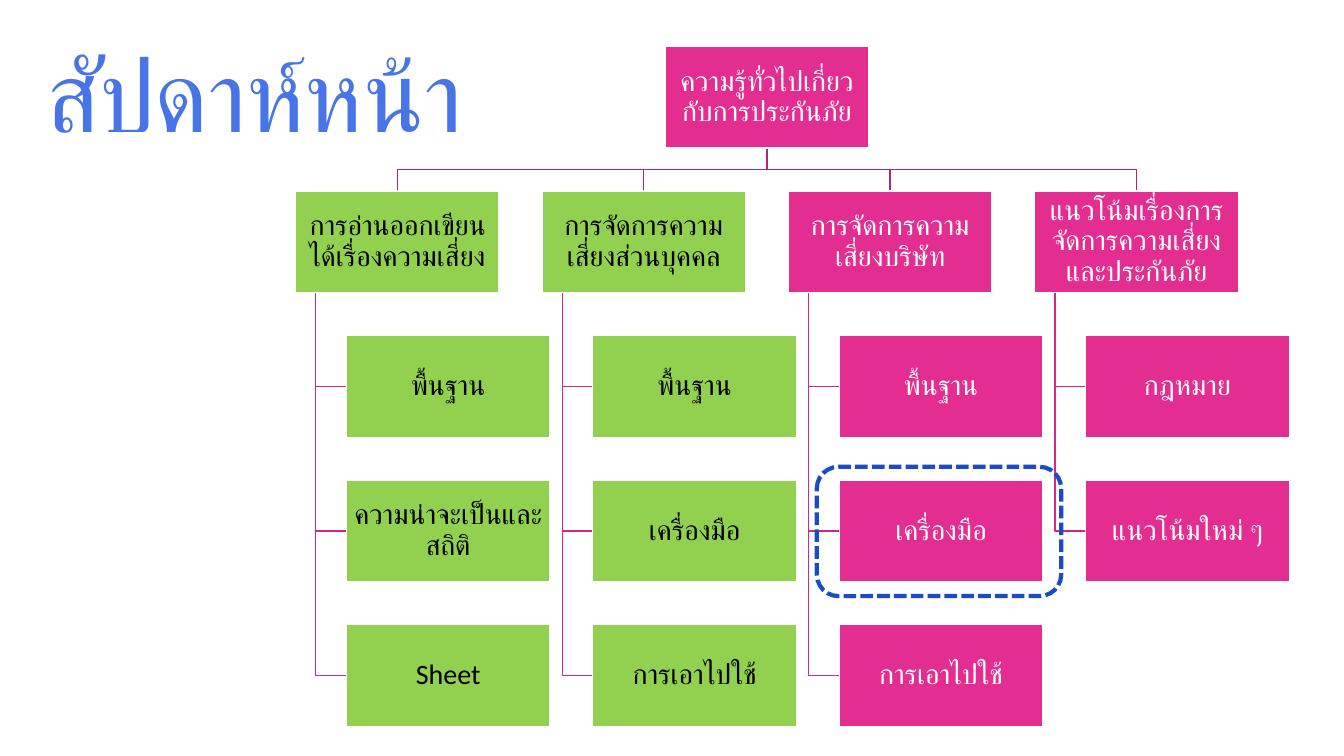
from dataclasses import dataclass

from pptx import Presentation
from pptx.dml.color import RGBColor
from pptx.enum.dml import MSO_LINE
from pptx.enum.shapes import MSO_SHAPE
from pptx.enum.text import MSO_ANCHOR, PP_ALIGN
from pptx.util import Inches, Pt

RECT = MSO_SHAPE.RECTANGLE
ROUND_RECT = MSO_SHAPE.ROUNDED_RECTANGLE
DASH = MSO_LINE.SQUARE_DOT
MIDDLE = MSO_ANCHOR.MIDDLE
BOTTOM = MSO_ANCHOR.BOTTOM
LEFT = PP_ALIGN.LEFT
CENTER = PP_ALIGN.CENTER


@dataclass(frozen=True)
class Theme:
    title: str = "4775E7"
    pink: str = "E32D91"
    green: str = "92D050"
    white: str = "FFFFFF"
    black: str = "000000"
    trunk: str = "B62474"
    branch: str = "CE2984"
    highlight: str = "1A4CC8"
    title_font: str = "Lato"
    node_font: str = "Calibri"
    title_size: int = 72
    node_size: int = 20
    thin: int = 1
    thick: int = 3


THEME = Theme()

NODE_W, NODE_H = 2.02, 1.01
CHART_LEFT, CHART_TOP = 2.93, 0.46
COL_STEP, ROW_STEP = 1.21, 1.42
INDENT, STEM = 0.25, 0.1

ROOT = "ความรู้ทั่วไปเกี่ยวกับการประกันภัย"
BRANCHES = [
    ("การอ่านออกเขียนได้เรื่องความเสี่ยง", THEME.green, THEME.black,
     ["พื้นฐาน", "ความน่าจะเป็นและสถิติ", "Sheet"]),
    ("การจัดการความเสี่ยงส่วนบุคคล", THEME.green, THEME.black,
     ["พื้นฐาน", "เครื่องมือ", "การเอาไปใช้"]),
    ("การจัดการความเสี่ยงบริษัท", THEME.pink, THEME.white,
     ["พื้นฐาน", "เครื่องมือ", "การเอาไปใช้"]),
    ("แนวโน้มเรื่องการจัดการความเสี่ยงและประกันภัย", THEME.pink, THEME.white,
     ["กฎหมาย", "แนวโน้มใหม่ ๆ"]),
]


def rgb(color):
    return RGBColor.from_string(color)


def grid(col, row, dx=0, dy=0):
    x = CHART_LEFT + NODE_W * (col * COL_STEP + dx)
    y = CHART_TOP + NODE_H * (row * ROW_STEP + dy)
    return Inches(x), Inches(y)


def outline(sp, color, width):
    sp.shadow.inherit = False
    sp.line.color.rgb = rgb(color)
    sp.line.width = Pt(width)


def write(sp, text, font, size, color, align, anchor, spacing):
    tf = sp.text_frame
    tf.word_wrap = True
    tf.vertical_anchor = anchor
    tf.text = text
    p = tf.paragraphs[0]
    p.alignment = align
    p.line_spacing = spacing
    r = p.runs[0]
    r.font.name = font
    r.font.size = Pt(size)
    r.font.color.rgb = rgb(color)


def add_title(s, prs, text):
    w, h = prs.slide_width, prs.slide_height
    sp = s.shapes.add_textbox(int(w * 0.027), int(h * 0.061),
                              int(w * 0.92), int(h * 0.147))
    write(sp, text, THEME.title_font, THEME.title_size, THEME.title,
          LEFT, BOTTOM, 0.8)


def add_node(s, text, position, fill, color):
    sp = s.shapes.add_shape(RECT, *position, Inches(NODE_W), Inches(NODE_H))
    sp.fill.solid()
    sp.fill.fore_color.rgb = rgb(fill)
    outline(sp, THEME.white, THEME.thin)
    tf = sp.text_frame
    tf.margin_left = tf.margin_right = Inches(0.01)
    tf.margin_top = tf.margin_bottom = Inches(0.01)
    write(sp, text, THEME.node_font, THEME.node_size, color,
          CENTER, MIDDLE, 0.9)


def add_link(s, points, color):
    builder = s.shapes.build_freeform(*points[0])
    builder.add_line_segments(points[1:], close=False)
    sp = builder.convert_to_shape()
    sp.fill.background()
    outline(sp, color, THEME.thin)


def add_highlight(s, col, row):
    sp = s.shapes.add_shape(ROUND_RECT, *grid(col, row, INDENT - 0.11, -0.13),
                            Inches(NODE_W * 1.2), Inches(NODE_H * 1.27))
    sp.fill.background()
    outline(sp, THEME.highlight, THEME.thick)
    sp.line.dash_style = DASH


def add_links(s, root_col):
    middle = (1 + ROW_STEP) / 2
    for col, (_, _, _, children) in enumerate(BRANCHES):
        add_link(s, [grid(root_col, 0, 0.5, 1), grid(root_col, 0, 0.5, middle),
                     grid(col, 0, 0.5, middle), grid(col, 1, 0.5)],
                 THEME.trunk)
        for row in range(2, 2 + len(children)):
            add_link(s, [grid(col, 1, STEM, 1), grid(col, row, STEM, 0.5),
                         grid(col, row, INDENT, 0.5)], THEME.branch)


def add_nodes(s, root_col):
    add_node(s, ROOT, grid(root_col, 0), THEME.pink, THEME.white)
    for col, (name, fill, color, children) in enumerate(BRANCHES):
        add_node(s, name, grid(col, 1), fill, color)
        for row, child in enumerate(children, 2):
            add_node(s, child, grid(col, row, INDENT), fill, color)


def main():
    prs = Presentation()
    prs.slide_width, prs.slide_height = Inches(13.33), Inches(7.5)
    s = prs.slides.add_slide(prs.slide_layouts[6])
    root_col = (len(BRANCHES) - 1) / 2
    add_title(s, prs, "สัปดาห์หน้า")
    add_links(s, root_col)
    add_nodes(s, root_col)
    add_highlight(s, 2, 3)
    prs.save("out.pptx")


if __name__ == "__main__":
    main()
